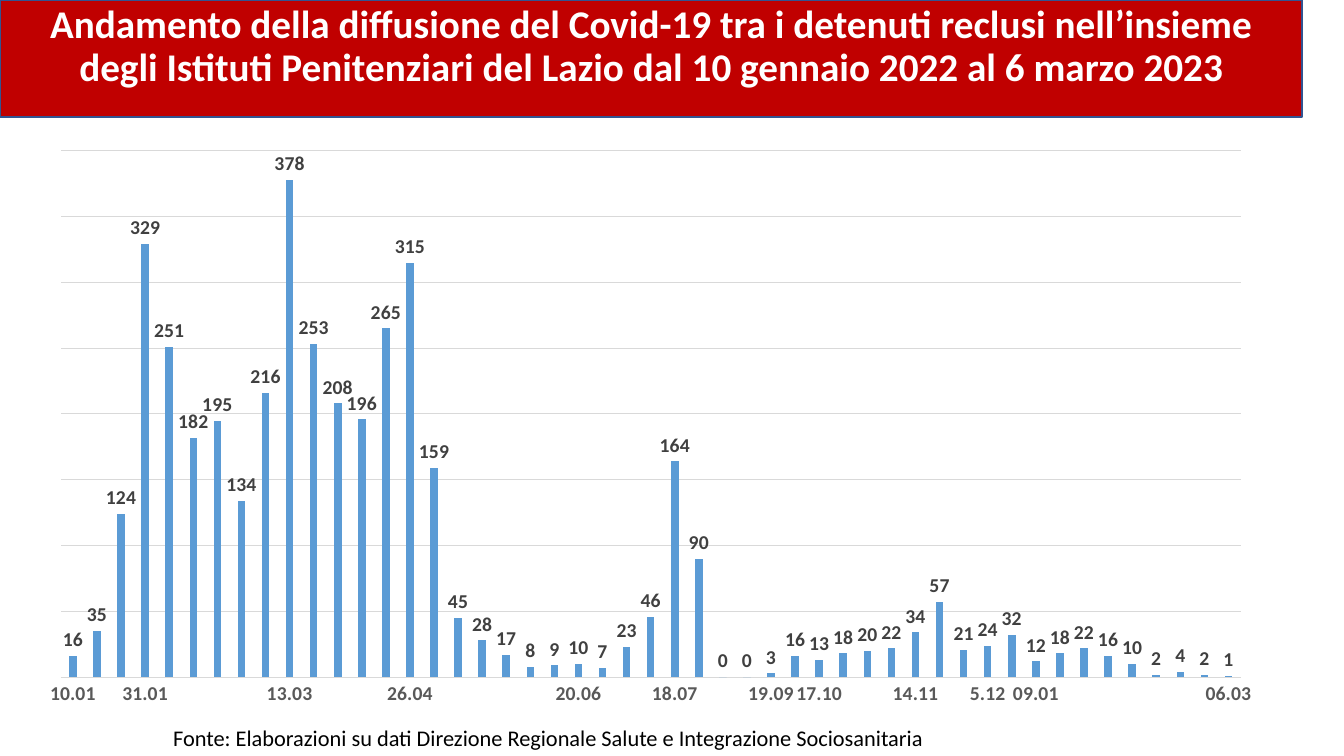
import lxml.etree
import pptx
import pptx.chart.data
import pptx.dml.color
import pptx.enum.chart
import pptx.enum.text
import pptx.enum.shapes
import pptx.oxml
import pptx.oxml.ns
import pptx.util

Pt = pptx.util.Pt
FONT = "Calibri"
TITLE = ("Andamento della diffusione del Covid-19 tra i detenuti reclusi nell’insieme "
         "degli Istituti Penitenziari del Lazio dal 10 gennaio 2022 al 6 marzo 2023")
SOURCE = "Fonte: Elaborazioni su dati Direzione Regionale Salute e Integrazione Sociosanitaria"
CASES = [16, 35, 124, 329, 251, 182, 195, 134, 216, 378, 253, 208, 196, 265, 315, 159, 45,
         28, 17, 8, 9, 10, 7, 23, 46, 164, 90, 0, 0, 3, 16, 13, 18, 20, 22, 34, 57, 21, 24,
         32, 12, 18, 22, 16, 10, 2, 4, 2, 1]
DATES = {0: "10.01", 3: "31.01", 9: "13.03", 14: "26.04", 21: "20.06", 25: "18.07",
         29: "19.09", 31: "17.10", 35: "14.11", 38: "5.12", 40: "09.01", 48: "06.03"}


def rgb(value):
    """Turn a hex string into a colour."""
    return pptx.dml.color.RGBColor.from_string(value)


def style_font(font, size, color, bold=False):
    """Set the face, size, colour and weight of a font."""
    font.name, font.size, font.bold = FONT, Pt(size), bold
    font.color.rgb = rgb(color)


def style_line(line, color, width):
    """Set the colour and width of a line."""
    line.color.rgb = rgb(color)
    line.width = Pt(width)


def add_run(p, text, size, color, bold=False):
    """Add one formatted run to a paragraph."""
    r = p.add_run()
    r.text = text
    style_font(r.font, size, color, bold)


def add_banner(s, text, x, y, w, h):
    """Add the red title banner."""
    sp = s.shapes.add_shape(pptx.enum.shapes.MSO_SHAPE.RECTANGLE, Pt(x), Pt(y), Pt(w), Pt(h))
    sp.shadow.inherit = False
    sp.fill.solid()
    sp.fill.fore_color.rgb = rgb("C00000")
    style_line(sp.line, "325491", 1)
    tf = sp.text_frame
    tf.word_wrap = True
    tf.vertical_anchor = pptx.enum.text.MSO_ANCHOR.TOP
    p = tf.paragraphs[0]
    p.alignment = pptx.enum.text.PP_ALIGN.CENTER
    p.line_spacing = 0.9
    p.space_before = Pt(10)
    add_run(p, text, 28, "FFFFFF", True)


def add_note(s, text, x, y, w, h):
    """Add a single-line text box."""
    tf = s.shapes.add_textbox(Pt(x), Pt(y), Pt(w), Pt(h)).text_frame
    tf.word_wrap = False
    tf.auto_size = pptx.enum.text.MSO_AUTO_SIZE.SHAPE_TO_FIT_TEXT
    add_run(tf.paragraphs[0], text, 16, "000000")


def set_plot_area(chart, x, y, w, h):
    """Fix the inner plot area as fractions of the chart."""
    plot_area = chart._chartSpace.chart.plotArea
    for old in plot_area.findall(pptx.oxml.ns.qn("c:layout")):
        plot_area.remove(old)
    places = "".join(f'<c:{k} val="{v}"/>' for k, v in zip("xywh", (x, y, w, h)))
    plot_area.insert(0, pptx.oxml.parse_xml(
        f'<c:layout {pptx.oxml.ns.nsdecls("c")}><c:manualLayout>'
        '<c:layoutTarget val="inner"/><c:xMode val="edge"/><c:yMode val="edge"/>'
        f'{places}</c:manualLayout></c:layout>'.replace("c:w ", "c:w ")))


def style_axes(chart):
    """Format the date axis and the hidden value axis with its grid."""
    none = pptx.enum.chart.XL_TICK_MARK.NONE
    dates, cases = chart.category_axis, chart.value_axis
    dates.major_tick_mark = dates.minor_tick_mark = none
    style_font(dates.tick_labels.font, 14, "595959", True)
    style_line(dates.format.line, "D9D9D9", 0.75)
    axis = dates._element
    axis.find(pptx.oxml.ns.qn("c:txPr")).find(pptx.oxml.ns.qn("a:bodyPr")).set("rot", "-60000000")
    skip = lxml.etree.Element(pptx.oxml.ns.qn("c:tickLblSkip"), val="1")
    axis.find(pptx.oxml.ns.qn("c:noMultiLvlLbl")).addprevious(skip)
    cases.visible = False
    cases.minimum_scale, cases.maximum_scale, cases.major_unit = 0, 400, 50
    cases.has_major_gridlines = True
    style_line(cases.major_gridlines.format.line, "D9D9D9", 0.75)


def add_cases_chart(s, x, y, w, h):
    """Add the column chart of cases by date."""
    data = pptx.chart.data.CategoryChartData()
    data.categories = [DATES.get(i, "") for i in range(len(CASES))]
    data.add_series("Series 1", CASES)
    kind = pptx.enum.chart.XL_CHART_TYPE.COLUMN_CLUSTERED
    chart = s.shapes.add_chart(kind, Pt(x), Pt(y), Pt(w), Pt(h), data).chart
    chart.has_legend = chart.has_title = False
    style_font(chart.font, 14, "000000", True)
    plot = chart.plots[0]
    plot.gap_width, plot.overlap, plot.vary_by_categories = 219, -27, False
    bars = plot.series[0]
    bars.format.fill.solid()
    bars.format.fill.fore_color.rgb = rgb("5B9BD5")
    labels = bars.data_labels
    labels.show_value = True
    labels.position = pptx.enum.chart.XL_LABEL_POSITION.OUTSIDE_END
    style_font(labels.font, 14, "404040", True)
    style_axes(chart)
    set_plot_area(chart, 0.03, 0.02, 0.94, 0.91)


def main():
    """Build the slide and save it."""
    prs = pptx.Presentation()
    prs.slide_width, prs.slide_height = Pt(960), Pt(540)
    s = prs.slides.add_slide(prs.slide_layouts[6])
    add_banner(s, TITLE, 0, 0, 930, 83.5)
    add_note(s, SOURCE, 116.6, 513.4, 564.5, 26.6)
    add_cases_chart(s, 16.6, 99.4, 896.4, 413.3)
    prs.save("out.pptx")


if __name__ == "__main__":
    main()
